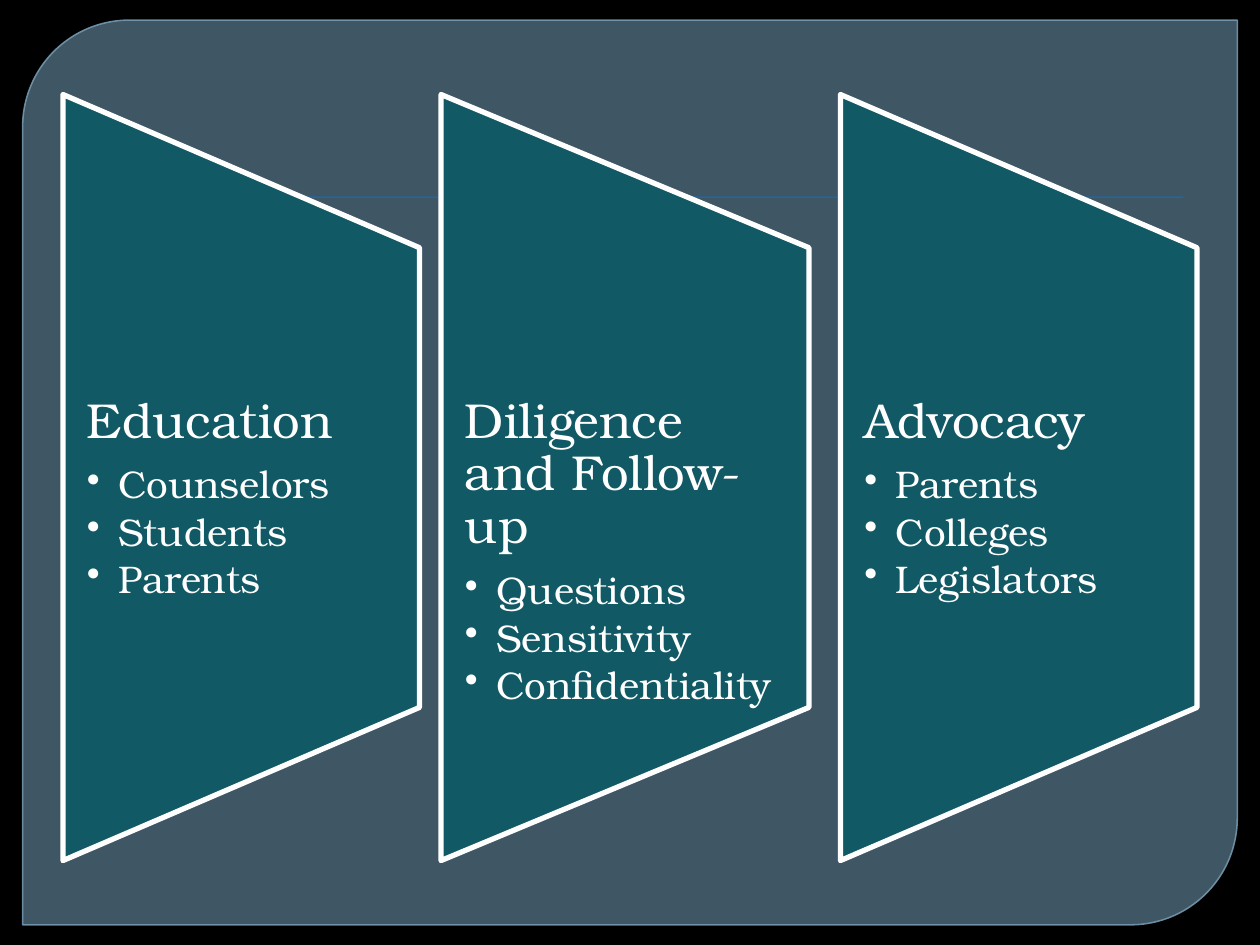
"""Build a slide with three trapezoid panels, each holding a heading and bullets."""
from dataclasses import dataclass

from lxml.etree import SubElement
from pptx import Presentation
from pptx.dml.color import RGBColor
from pptx.enum.shapes import MSO_SHAPE
from pptx.oxml.ns import qn
from pptx.util import Inches, Pt

BLACK = RGBColor(0x00, 0x00, 0x00)
WHITE = RGBColor(0xFF, 0xFF, 0xFF)
SLATE = RGBColor(0x61, 0x86, 0x9C)
SLATE_EDGE = RGBColor(0x77, 0x9B, 0xB2)
BLUE = RGBColor(0x0F, 0x6F, 0xC6)
TEAL = RGBColor(0x11, 0x59, 0x64)
FONT = "TeX Gyre Bonum"
PANEL_TOP, PANEL_HEIGHT = 0.75, 6.08
TEXT_TOP, TEXT_BOTTOM = 3.14, 5.62


@dataclass(frozen=True)
class Panel:
    left: float
    width: float
    heading: str
    bullets: tuple[str, ...]


PANELS = (
    Panel(0.5, 2.83, "Education", ("Counselors", "Students", "Parents")),
    Panel(3.5, 2.92, "Diligence and Follow-up",
          ("Questions", "Sensitivity", "Confidentiality")),
    Panel(6.67, 2.83, "Advocacy", ("Parents", "Colleges", "Legislators")),
)


def set_opacity(fill, percent: int) -> None:
    color = fill._xPr.find(qn("a:solidFill"))[0]
    SubElement(color, qn("a:alpha"), val=str(percent * 1000))


def add_filled(slide, kind, left: float, top: float, width: float, height: float,
               color: RGBColor):
    shape = slide.shapes.add_shape(
        kind, Inches(left), Inches(top), Inches(width), Inches(height))
    shape.shadow.inherit = False
    shape.fill.solid()
    shape.fill.fore_color.rgb = color
    return shape


def add_backdrop(slide) -> None:
    card = add_filled(slide, MSO_SHAPE.ROUND_2_DIAG_RECTANGLE,
                      0.18, 0.16, 9.64, 7.18, SLATE)
    card.adjustments[0] = 0.118
    card.adjustments[1] = 0
    set_opacity(card.fill, 65)
    card.line.color.rgb = SLATE_EDGE
    card.line.width = Pt(0.87)
    set_opacity(card.line.fill, 88)
    rule = add_filled(slide, MSO_SHAPE.RECTANGLE, 0.64, 1.56, 8.75, 0.01, BLUE)
    rule.line.fill.background()


def style_paragraph(paragraph, size: int, space_after: float) -> None:
    paragraph.line_spacing = 0.9
    paragraph.space_after = Pt(space_after)
    paragraph.font.name = FONT
    paragraph.font.size = Pt(size)
    paragraph.font.color.rgb = WHITE


def add_bullet(frame, text: str) -> None:
    paragraph = frame.add_paragraph()
    paragraph.text = text
    paragraph.level = 1
    style_paragraph(paragraph, 22, 3.3)
    properties = paragraph._p.get_or_add_pPr()
    properties.set("marL", str(Inches(0.25)))
    properties.set("indent", str(-Inches(0.25)))
    bullet = properties.makeelement(qn("a:buChar"), {"char": "•"})
    properties.find(qn("a:defRPr")).addprevious(bullet)


def add_panel(slide, panel: Panel) -> None:
    trapezoid = add_filled(
        slide, MSO_SHAPE.FLOWCHART_MANUAL_OPERATION,
        panel.left + (panel.width - PANEL_HEIGHT) / 2,
        PANEL_TOP + (PANEL_HEIGHT - panel.width) / 2,
        PANEL_HEIGHT, panel.width, TEAL)
    trapezoid.rotation = 270
    trapezoid.line.color.rgb = WHITE
    trapezoid.line.width = Pt(3)

    frame = slide.shapes.add_textbox(
        Inches(panel.left), Inches(TEXT_TOP),
        Inches(panel.width), Inches(TEXT_BOTTOM - TEXT_TOP)).text_frame
    frame.word_wrap = True
    frame.margin_left, frame.margin_right = Inches(0.19), Inches(0.2)
    frame.margin_top = frame.margin_bottom = 0
    heading = frame.paragraphs[0]
    heading.text = panel.heading
    style_paragraph(heading, 28, 9.8)
    for text in panel.bullets:
        add_bullet(frame, text)


def main() -> None:
    presentation = Presentation()
    presentation.slide_width = Inches(10)
    presentation.slide_height = Inches(7.5)
    slide = presentation.slides.add_slide(presentation.slide_layouts[6])
    slide.background.fill.solid()
    slide.background.fill.fore_color.rgb = BLACK
    add_backdrop(slide)
    for panel in PANELS:
        add_panel(slide, panel)
    presentation.save("out.pptx")


if __name__ == "__main__":
    main()
